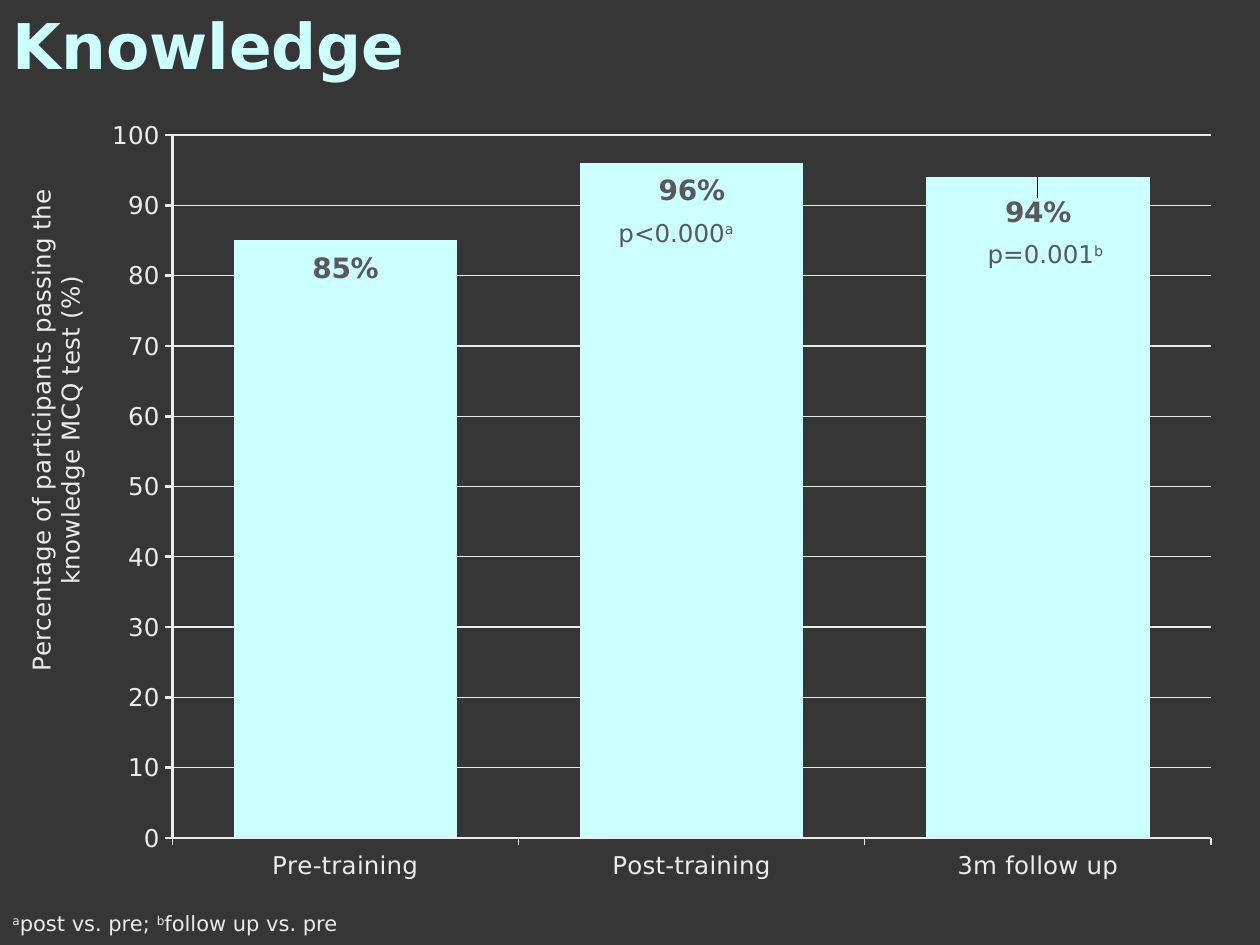
from lxml import etree
from pptx import Presentation, util as u
from pptx.chart.data import CategoryChartData
from pptx.dml.color import RGBColor
from pptx.enum import chart as ch, text
from pptx.oxml.ns import qn

COLORS = {"back": "333333", "panel": "363636", "accent": "CCFFFF",
          "light": "ECECEC", "grey": "595959"}
FONT = "DejaVu Sans"
W, H = 10, 7.5
CHART = (-0.04, 0.84, 9.84, 6.27)
RESULTS = {"Pre-training": 85, "Post-training": 96, "3m follow up": 94}


def rgb(name):
    return RGBColor.from_string(COLORS[name])


def set_font(font, size, color, bold=False):
    font.name, font.size, font.bold = FONT, u.Pt(size), bold
    font.color.rgb = rgb(color)


def set_line(line, width=0.75):
    line.color.rgb = rgb("light")
    line.width = u.Pt(width)


def add_layout(parent, after, **shares):
    """Place a chart part by shares of the chart's size."""
    for old in parent.findall(qn("c:layout")):
        parent.remove(old)
    layout = etree.Element(qn("c:layout"))
    manual = etree.SubElement(layout, qn("c:manualLayout"))
    for tag, value in shares.items():
        etree.SubElement(manual, qn("c:" + tag)).set("val", str(value))
    if after is None:
        parent.insert(0, layout)
    else:
        parent.find(qn(after)).addnext(layout)


def add_title(s, words):
    sp = s.shapes.title
    sp.left, sp.top, sp.width, sp.height = 0, 0, u.Inches(W), u.Inches(H)
    sp.fill.solid()
    sp.fill.fore_color.rgb = rgb("panel")
    tf = sp.text_frame
    tf.text = words
    tf.auto_size = text.MSO_AUTO_SIZE.NONE
    tf.vertical_anchor = text.MSO_ANCHOR.TOP
    p = tf.paragraphs[0]
    p.alignment = text.PP_ALIGN.LEFT
    set_font(p.runs[0].font, 36, "accent", True)


def add_note(s, box, parts, size, color):
    """Add a text box; parts pair each wording with True for superscript."""
    sp = s.shapes.add_textbox(*map(u.Inches, box))
    tf = sp.text_frame
    tf.word_wrap = True
    tf.auto_size = text.MSO_AUTO_SIZE.SHAPE_TO_FIT_TEXT
    for words, raised in parts:
        r = tf.paragraphs[0].add_run()
        r.text = words
        set_font(r.font, size, color)
        if raised:
            r.font._element.set("baseline", "30000")


def format_axes(chart):
    for axis in (chart.category_axis, chart.value_axis):
        set_font(axis.tick_labels.font, 14, "light")
        axis.major_tick_mark = ch.XL_TICK_MARK.OUTSIDE
        set_line(axis.format.line)
    axis = chart.value_axis
    axis.minimum_scale, axis.maximum_scale, axis.major_unit = 0, 100, 10
    set_line(axis.format.line, 1.5)
    set_line(axis.major_gridlines.format.line)
    title = axis.axis_title
    tf = title.text_frame
    tf.text = "Percentage of participants passing the knowledge MCQ test (%)"
    set_font(tf.paragraphs[0].runs[0].font, 14, "light")
    tf._txBody.bodyPr.set("rot", "-5400000")
    tf._txBody.bodyPr.set("vert", "horz")
    add_layout(title._element, "c:tx", xMode="edge", yMode="edge", x=0.02, y=0.1)


def label_bars(series):
    shifts = (0.01, 0.01, 0.02)
    for i, (value, shift) in enumerate(zip(RESULTS.values(), shifts)):
        label = series.points[i].data_label
        label.text_frame.text = f"{value}%"
        set_font(label.text_frame.paragraphs[0].runs[0].font, 16, "grey", True)
        label.position = ch.XL_LABEL_POSITION.INSIDE_END
        d_lbl = series._element.findall(".//" + qn("c:dLbl"))[i]
        add_layout(d_lbl, "c:idx", x=0, y=shift)


def add_bars(s):
    data = CategoryChartData()
    data.categories = list(RESULTS)
    data.add_series("Series 1", list(RESULTS.values()))
    chart = s.shapes.add_chart(ch.XL_CHART_TYPE.COLUMN_CLUSTERED,
                               *map(u.Inches, CHART), data).chart
    chart.has_legend = chart.has_title = False
    set_font(chart.font, 10, "light")
    plot = chart.plots[0]
    plot.gap_width, plot.vary_by_categories = 55, False
    series = plot.series[0]
    series.format.fill.solid()
    series.format.fill.fore_color.rgb = rgb("accent")
    format_axes(chart)
    label_bars(series)
    area = chart._chartSpace.find(".//" + qn("c:plotArea"))
    add_layout(area, None, layoutTarget="inner", xMode="edge", yMode="edge",
               x=0.143, y=0.037, w=0.838, h=0.89)


def main():
    prs = Presentation()
    prs.slide_width, prs.slide_height = u.Inches(W), u.Inches(H)
    s = prs.slides.add_slide(prs.slide_layouts[5])
    s.background.fill.solid()
    s.background.fill.fore_color.rgb = rgb("back")

    # Title panel and chart
    add_title(s, "Knowledge")
    add_bars(s)

    # Significance notes and key
    add_note(s, (4.81, 1.68, 1.38, 0.34),
             [("p<0.000", False), ("a", True)], 14, "grey")
    add_note(s, (7.74, 1.85, 1.18, 0.34),
             [("p=0.001", False), ("b", True)], 14, "grey")
    add_note(s, (0, 7.18, 4.72, 0.3),
             [("a", True), ("post vs. pre; ", False),
              ("b", True), ("follow up vs. pre", False)], 12, "light")
    prs.save("out.pptx")


if __name__ == "__main__":
    main()
